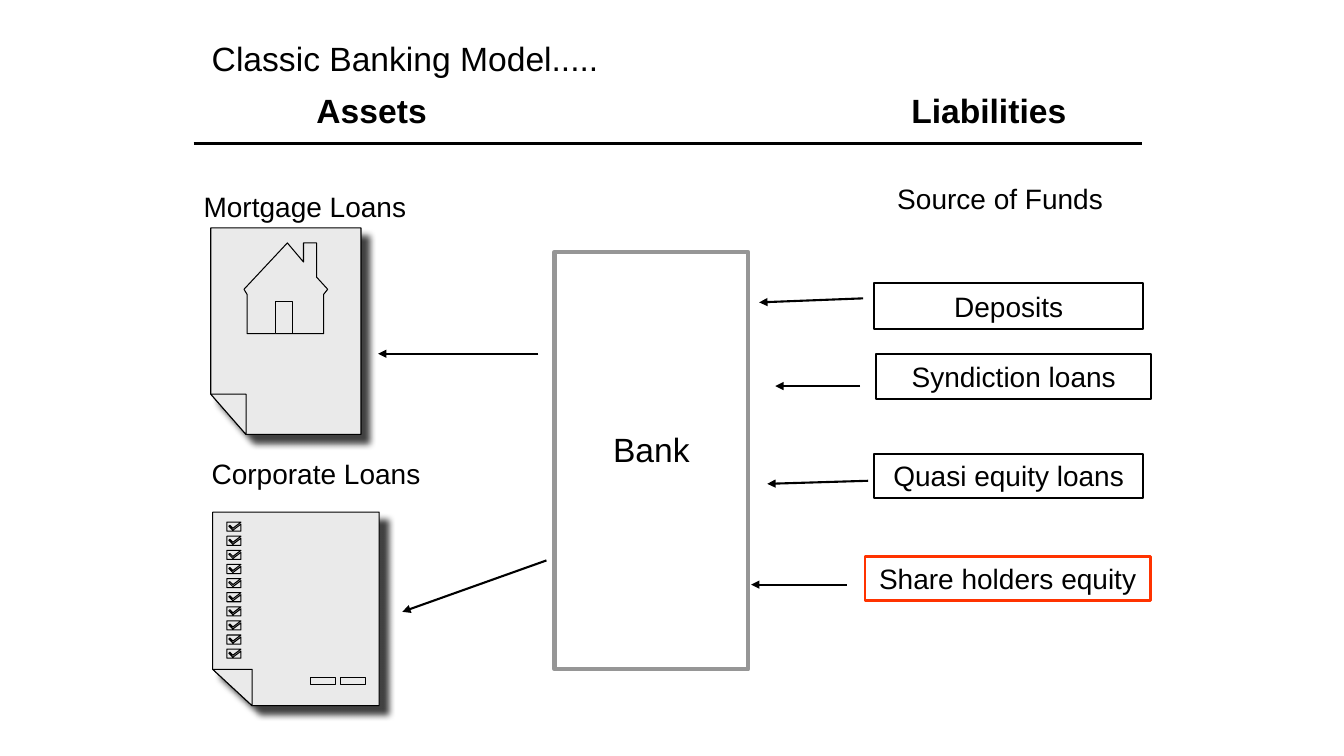
from lxml.etree import SubElement
from pptx import Presentation
from pptx.dml.color import RGBColor
from pptx.enum.shapes import MSO_CONNECTOR, MSO_SHAPE
from pptx.enum.text import MSO_ANCHOR, MSO_AUTO_SIZE, PP_ALIGN
from pptx.oxml.ns import qn
from pptx.util import Inches, Pt

BLACK = RGBColor(0x00, 0x00, 0x00)
WHITE = RGBColor(0xFF, 0xFF, 0xFF)
GREY = RGBColor(0x96, 0x96, 0x96)
PAPER = RGBColor(0xEA, 0xEA, 0xEA)
RED = RGBColor(0xFF, 0x33, 0x00)

# Content: text, (left, top, width, height)
TITLE = "Classic Banking Model.....", (2, 0.33, 9.17, 0.5)
HEADS = "Assets\tLiabilities", (3.04, 0.84, 7.88, 0.5)
HEAD_TAB = 5.9
LABELS = [
    ("Mortgage Loans", (1.92, 1.83, 2.58, 0.43), PP_ALIGN.LEFT),
    ("Corporate Loans", (2, 4.48, 2.58, 0.43), PP_ALIGN.LEFT),
    ("Source of Funds", (8.42, 1.75, 3, 0.44), PP_ALIGN.CENTER),
]
BANK = "Bank", (5.5, 2.5, 1.92, 4.14)
FUNDS = [
    ("Deposits", (8.67, 2.81, 2.67, 0.45), BLACK, 1.5),
    ("Syndiction loans", (8.69, 3.51, 2.73, 0.45), BLACK, 1.5),
    ("Quasi equity loans", (8.67, 4.5, 2.67, 0.44), BLACK, 1.5),
    ("Share holders equity", (8.58, 5.52, 2.83, 0.44), RED, 2),
]
RULE = (1.92, 1.42, 11.33, 1.42)
ARROWS = [
    (5.34, 3.51, 3.75, 3.51),
    (5.42, 5.56, 3.99, 6.07),
    (8.56, 2.96, 7.53, 3),
    (8.53, 3.83, 7.69, 3.83),
    (8.61, 4.77, 7.61, 4.8),
    (8.4, 5.8, 7.45, 5.8),
]
HOUSE = [(2.45, 2.92), (2.45, 3.31), (3.21, 3.31), (3.21, 2.92), (3.25, 2.87),
         (3.14, 2.75), (3.14, 2.41), (3.01, 2.41), (3.01, 2.6), (2.85, 2.41),
         (2.42, 2.87)]
TICK = [(0, 0), (0.14, 0), (0.06, 0.06), (0.03, 0.03), (0.02, 0.04),
        (0.06, 0.08), (0.14, 0.02), (0.14, 0.09), (0, 0.09)]
TICKS = 10
TICK_LEFT, TICK_TOP, TICK_STEP = 2.25, 5.18, 0.14

deck = Presentation()
deck.slide_width, deck.slide_height = Inches(13.33), Inches(7.5)
slide = deck.slides.add_slide(deck.slide_layouts[5])
shapes = slide.shapes


def apply(item, values):
    for name, value in values.items():
        setattr(item, name, value)


def write(shape, text, size, align=PP_ALIGN.LEFT, anchor=MSO_ANCHOR.TOP, bold=False):
    frame = shape.text_frame
    frame.text = text
    apply(frame, {"word_wrap": True, "auto_size": MSO_AUTO_SIZE.NONE,
                  "vertical_anchor": anchor})
    para = frame.paragraphs[0]
    para.alignment = align
    apply(para.font, {"name": "Arial", "size": Pt(size), "bold": bold})
    para.font.color.rgb = BLACK
    return frame


def ink(shape, color, width):
    shape.line.color.rgb = color
    shape.line.width = Pt(width)


def label(text, place, size, **style):
    box = shapes.add_textbox(*map(Inches, place))
    return write(box, text, size, **style)


def panel(text, place, size, color, width):
    box = shapes.add_shape(MSO_SHAPE.RECTANGLE, *map(Inches, place))
    box.shadow.inherit = False
    ink(box, color, width)
    box.fill.solid()
    box.fill.fore_color.rgb = WHITE
    return write(box, text, size, PP_ALIGN.CENTER, MSO_ANCHOR.MIDDLE)


def link(ends, width, arrow=True):
    line = shapes.add_connector(MSO_CONNECTOR.STRAIGHT, *map(Inches, ends))
    ink(line, BLACK, width)
    if arrow:
        SubElement(line.line._get_or_add_ln(), qn("a:tailEnd"), type="triangle")
    SubElement(line._element.spPr, qn("a:effectLst"))


def rect(left, top, right, bottom):
    return [(left, top), (right, top), (right, bottom), (left, bottom)]


def sheet(left, top, right, bottom, fold_x, fold_y):
    page = [(fold_x, bottom), (left, fold_y), (left, top), (right, top), (right, bottom)]
    return [page, [(left, fold_y), (fold_x, fold_y), (fold_x, bottom)]]


def paper(outlines):
    """Draw the outlines as one shape, each filled on its own."""
    unit = 1000
    grid = [[(x * unit, y * unit) for x, y in line] for line in outlines]
    pen = shapes.build_freeform(*grid[0][0], scale=Inches(1) / unit)
    for spot, line in enumerate(grid):
        if spot:
            pen.move_to(*line[0])
        pen.add_line_segments(line[1:], close=True)
    page = pen.convert_to_shape()
    page.fill.solid()
    page.fill.fore_color.rgb = PAPER
    ink(page, BLACK, 0.75)

    # One path per outline
    first = page._element.spPr.find(".//" + qn("a:path"))
    target, moves = first, 0
    for step in list(first):
        if step.tag == qn("a:moveTo"):
            moves += 1
            if moves > 1:
                target = SubElement(first.getparent(), first.tag, dict(first.attrib))
        if moves > 1:
            target.append(step)

    # Soft shadow to the lower right
    page.shadow.inherit = False
    effects = page._element.spPr.find(qn("a:effectLst"))
    shade = SubElement(effects, qn("a:outerShdw"), blurRad=str(Pt(5)),
                       dist=str(Pt(8.5)), dir=str(45 * 60000),
                       algn="tl", rotWithShape="0")
    tone = SubElement(shade, qn("a:srgbClr"), val=str(BLACK))
    SubElement(tone, qn("a:alpha"), val="75000")


# Title, headings and rule
text, place = TITLE
title = shapes.title
apply(title, dict(zip(("left", "top", "width", "height"), map(Inches, place))))
write(title, text, 24)
link(RULE, 2, arrow=False)
heads = label(*HEADS, 24, bold=True)
tabs = SubElement(heads.paragraphs[0]._p.get_or_add_pPr(), qn("a:tabLst"))
SubElement(tabs, qn("a:tab"), pos=str(Inches(HEAD_TAB)), algn="l")
# The tab list goes before the default run format
tabs.getparent().insert(0, tabs)

# Loan papers
door = rect(2.73, 2.99, 2.9, 3.31)
paper(sheet(2.09, 2.26, 3.58, 4.31, 2.44, 3.91) + [HOUSE, door])
fields = [rect(x, 6.72, x + 0.25, 6.79) for x in (3.08, 3.38)]
checks = [[(TICK_LEFT + x, TICK_TOP + row * TICK_STEP + y) for x, y in TICK]
          for row in range(TICKS)]
paper(sheet(2.11, 5.08, 3.76, 7, 2.5, 6.64) + fields + checks)

# Labels, bank and sources of funds
for text, place, align in LABELS:
    label(text, place, 20, align=align)
bank = panel(*BANK, 24, GREY, 3)
bank.margin_bottom = Inches(0.27)
for text, place, color, width in FUNDS:
    panel(text, place, 20, color, width)

# Arrows
for ends in ARROWS:
    link(ends, 1.5)

deck.save("out.pptx")
